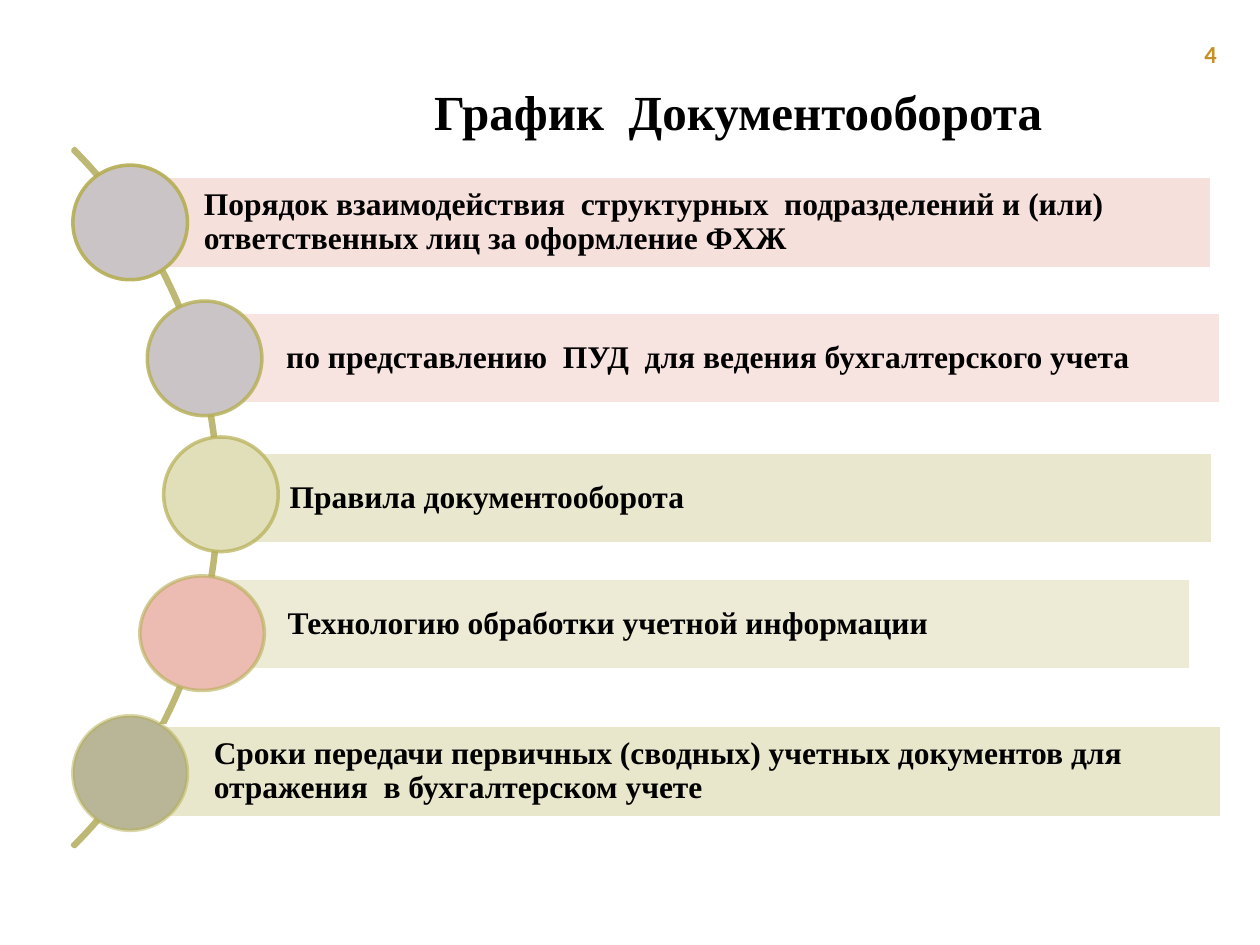
"""Build a slide of five document-flow topics strung along an arc."""
from dataclasses import dataclass

from lxml import etree
from pptx import Presentation
from pptx import util as u
from pptx.dml.color import RGBColor
from pptx.enum import shapes, text
from pptx.oxml import ns


@dataclass(frozen=True)
class Theme:
    ink: str = "000000"
    gold: str = "C79023"
    white: str = "FFFFFF"
    arc: str = "BEB875"
    rim: str = "B5AE53"
    rose: str = "F5DDD9"
    sand: str = "E1DFBA"
    olive: str = "D3CE98"
    grey: str = "CAC4C6"
    coral: str = "ECBBB2"
    moss: str = "B9B697"
    serif: str = "Times New Roman"
    sans: str = "Calibri"
    head: int = 28
    body: int = 18
    small: int = 14
    edge: int = 2


def write(shape, words, size=18, font="Times New Roman", color="000000",
          align=text.PP_ALIGN.LEFT, anchor=text.MSO_ANCHOR.TOP,
          left=0.25, top=0.13, side=0.13, lead=1.0):
    frame = shape.text_frame
    frame.word_wrap = True
    frame.auto_size = text.MSO_AUTO_SIZE.NONE
    frame.vertical_anchor = anchor
    frame.margin_left, frame.margin_right = u.Cm(left), u.Cm(side)
    frame.margin_top = frame.margin_bottom = u.Cm(top)
    para = frame.paragraphs[0]
    para.alignment, para.line_spacing = align, lead
    run = para.add_run()
    run.text = words
    run.font.name, run.font.size, run.font.bold = font, u.Pt(size), True
    run.font.color.rgb = RGBColor.from_string(color)


def draw(kind, box, fill, line, part="", alpha=100):
    shape = slide.shapes.add_shape(kind, *(u.Cm(n) for n in box))
    shape.shadow.inherit = False
    if fill:
        shape.fill.solid()
        shape.fill.fore_color.rgb = RGBColor.from_string(fill)
    else:
        shape.fill.background()
    shape.line.color.rgb = RGBColor.from_string(line)
    shape.line.width = u.Pt(theme.edge)
    for tint in shape._element.xpath(f"p:spPr/{part}a:solidFill/a:srgbClr"):
        if alpha < 100:
            etree.SubElement(tint, ns.qn("a:alpha")).set("val", str(alpha * 1000))
    return shape


theme = Theme()
deck = Presentation()
deck.slide_width, deck.slide_height = u.Cm(25.4), u.Cm(19.05)
slide = deck.slides.add_slide(deck.slide_layouts[5])

title = slide.shapes.title
title.left, title.top = u.Cm(6.78), u.Cm(1.52)
title.width, title.height = u.Cm(16.2), u.Cm(1.45)
write(title, "График  Документооборота", size=theme.head, font=theme.serif,
      color=theme.ink, align=text.PP_ALIGN.CENTER, side=0.25)

page = slide.shapes.add_textbox(u.Cm(23.88), u.Cm(0.51), u.Cm(1.52), u.Cm(1.02))
write(page, "4", size=theme.small, font=theme.sans, color=theme.gold,
      left=0.4, top=0.28)

arc = draw(shapes.MSO_SHAPE.BLOCK_ARC, (-15.49, 0.08, 19.91, 19.91), None, theme.arc)
for spot, value in enumerate((189, 27, 0.003)):
    arc.adjustments[spot] = value

tall, dot = 1.85, 2.31
rows = (
    ("Порядок взаимодействия  структурных  подразделений и (или) ответственных лиц за оформление ФХЖ",
     (2.64, 3.56, 21.79), theme.rose, 1.47, (1.47, 3.33, dot), theme.grey),
    ("по представлению  ПУД  для ведения бухгалтерского учета",
     (4.14, 6.3, 20.47), theme.rose, 1.63, (2.97, 6.07, dot), theme.grey),
    ("Правила документооборота",
     (4.37, 9.12, 20.07), theme.sand, 1.47, (3.3, 8.81, dot), theme.sand),
    ("Технологию обработки учетной информации",
     (3.53, 11.66, 20.47), theme.sand, 2.27, (2.82, 11.61, 2.51), theme.coral),
    ("Сроки передачи первичных (сводных) учетных документов для отражения  в бухгалтерском учете",
     (2.84, 14.63, 21.79), theme.olive, 1.47, (1.47, 14.43, dot), theme.moss),
)
for step, (words, bar, tone, indent, disc, shade) in enumerate(rows):
    alpha = 90 - 10 * step
    band = draw(shapes.MSO_SHAPE.RECTANGLE, (*bar, tall), tone, theme.white, alpha=alpha)
    write(band, words, size=theme.body, font=theme.serif, color=theme.ink,
          anchor=text.MSO_ANCHOR.MIDDLE, left=indent, lead=0.9)
    draw(shapes.MSO_SHAPE.OVAL, (*disc, dot), shade, theme.rim, "a:ln/", alpha)

deck.save("out.pptx")
